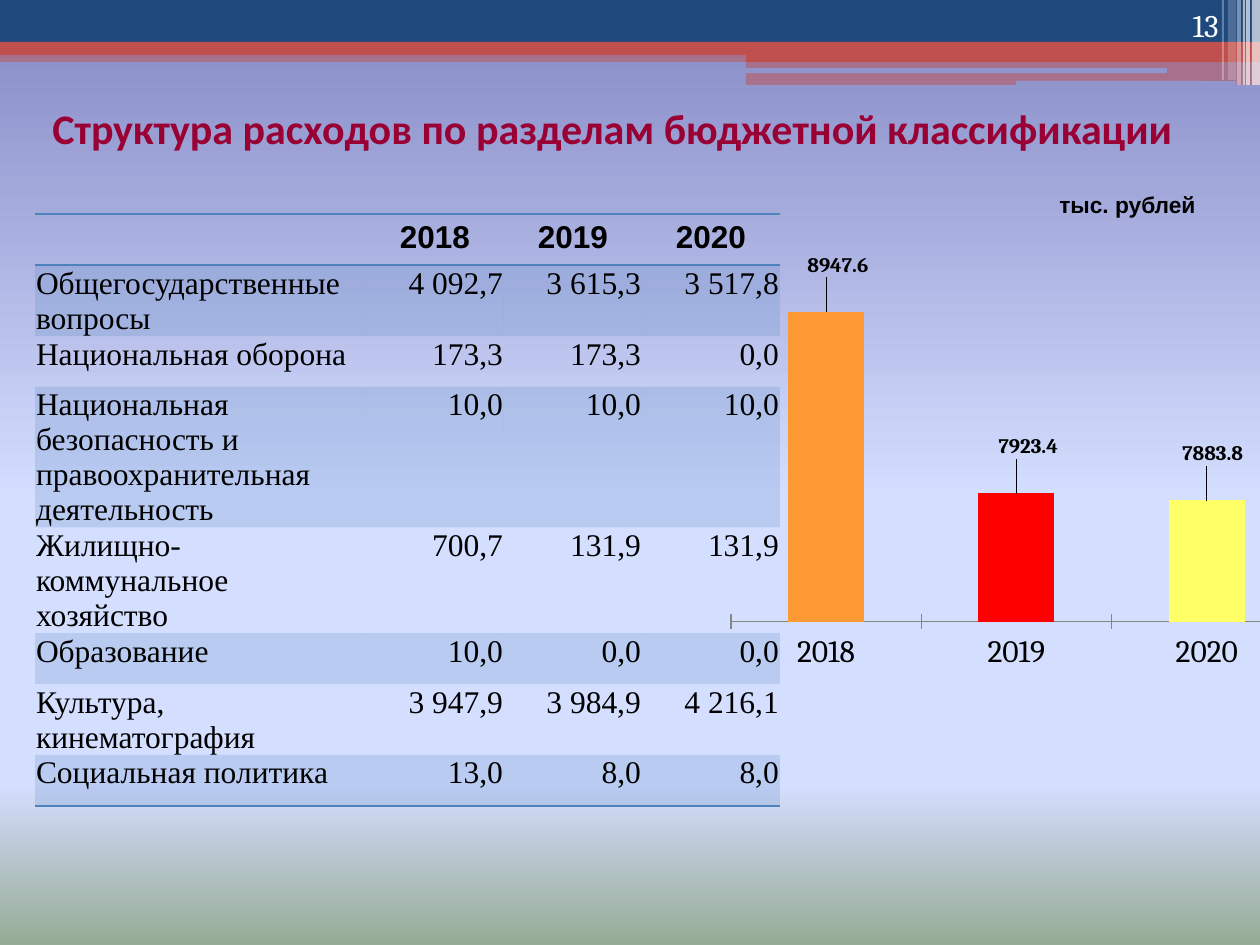
from pptx import Presentation
from pptx.chart.data import CategoryChartData
from pptx.dml.color import RGBColor
from pptx.enum.chart import XL_CHART_TYPE as CT, XL_LABEL_POSITION as LP, XL_TICK_MARK as TM
from pptx.enum.shapes import MSO_SHAPE as SHAPE
from pptx.enum.text import MSO_ANCHOR as ANCHOR, PP_ALIGN as AL
from pptx.oxml import parse_xml
from pptx.oxml.ns import nsdecls, qn
from pptx.util import Emu, Pt
from lxml.etree import SubElement

PX = 914400 // 126
C = dict(navy="1F497D", red="C0504D", white="FFFFFF", blue="4F81BD", black="000000",
         title="990033", sky="9095CC", axis="868686")
BACKGROUND = [(0, "8488C4"), (53, "D4DEFF"), (83, "D4DEFF"), (100, "96AB94")]

# Banner: left, top, width, height, colour, opacity %, preset
BANNER = [
    (0, 50, 1260, 12, "red", 50, SHAPE.RECTANGLE),
    (0, 0, 1260, 43, "navy", 100, SHAPE.RECTANGLE),
    (0, 42, 1260, 13, "red", 100, SHAPE.RECTANGLE),
    (746, 49, 514, 13, "red", 100, SHAPE.RECTANGLE),
    (746, 61, 514, 24, "red", 50, SHAPE.RECTANGLE),
    (745, 68, 422, 5, "sky", 100, SHAPE.ROUNDED_RECTANGLE),
    (1016, 81, 220, 5, "sky", 100, SHAPE.ROUNDED_RECTANGLE),
]
# Vertical stripes: left, width, height, opacity %
STRIPES = [(1252, 8, 85, 65), (1246, 4, 85, 65), (1243, 2, 85, 60),
           (1237, 4, 85, 40), (1228, 8, 80, 20), (1222, 2, 80, 30)]

TITLE = "Структура расходов по разделам бюджетной классификации"
YEARS = ["2018", "2019", "2020"]
EXPENSES = [
    ("Общегосударственные вопросы", "4 092,7", "3 615,3", "3 517,8"),
    ("Национальная оборона", "173,3", "173,3", "0,0"),
    ("Национальная безопасность и правоохранительная деятельность", "10,0", "10,0", "10,0"),
    ("Жилищно-коммунальное хозяйство", "700,7", "131,9", "131,9"),
    ("Образование", "10,0", "0,0", "0,0"),
    ("Культура, кинематография", "3 947,9", "3 984,9", "4 216,1"),
    ("Социальная политика", "13,0", "8,0", "8,0"),
]
COLUMNS, ROW = [331, 138, 138, 138], 51
TOTALS = [8947.6, 7923.4, 7883.8]
BAR_COLORS = ["FF9933", "FF0000", "FFFF66"]
LABEL_SHIFTS = [(0.02, -0.07), (0.02, -0.07), (0.01, -0.07)]


def box(*lengths):
    return [Emu(n * PX) for n in lengths]


def rgb(name):
    return RGBColor.from_string(C.get(name, name))


def paint(fill, color, opacity=100):
    fill.solid()
    fill.fore_color.rgb = rgb(color)
    if opacity < 100:
        clr = fill._xPr.find(qn("a:solidFill"))[0]
        SubElement(clr, qn("a:alpha")).set("val", str(opacity * 1000))


def style(font, size, name, color="black", bold=False):
    font.size, font.name, font.bold = Pt(size), name, bold
    font.color.rgb = rgb(color)


def write(tf, text, size, font, color="black", bold=False, align=AL.LEFT):
    p = tf.paragraphs[0]
    p.alignment = align
    r = p.add_run()
    r.text = text
    style(r.font, size, font, color, bold)


def add_bar(x, y, w, h, color, opacity, preset=SHAPE.RECTANGLE):
    sp = slide.shapes.add_shape(preset, *box(x, y, w, h))
    sp.shadow.inherit = False
    sp.line.fill.background()
    paint(sp.fill, color, opacity)


def add_text(x, y, w, h, *args, anchor=ANCHOR.TOP, **kwargs):
    tf = slide.shapes.add_textbox(*box(x, y, w, h)).text_frame
    tf.word_wrap = True
    tf.vertical_anchor = anchor
    write(tf, *args, **kwargs)


def add_border(cell, sides):
    for i, side in enumerate(sides):
        cell._tc.get_or_add_tcPr().insert(i, parse_xml(
            f'<a:ln{side} {nsdecls("a")} w="12700"><a:solidFill>'
            f'<a:srgbClr val="{C["blue"]}"/></a:solidFill></a:ln{side}>'))


def layout_xml(x, y, w=None, h=None):
    parts = [("xMode", "edge"), ("yMode", "edge")] if w else []
    if w:
        parts.insert(0, ("layoutTarget", "inner"))
    parts += [(k, v) for k, v in zip("xywh", (x, y, w, h)) if v is not None]
    inner = "".join(f'<c:{k} val="{v}"/>' for k, v in parts)
    return parse_xml(f'<c:layout {nsdecls("c")}><c:manualLayout>{inner}</c:manualLayout></c:layout>')


prs = Presentation()
prs.slide_width, prs.slide_height = box(1260, 945)
slide = prs.slides.add_slide(prs.slide_layouts[6])

# Background gradient
bg = slide.background.fill
bg.gradient()
bg.gradient_angle = 270
gs_list = bg._xPr.find(qn("a:gradFill")).find(qn("a:gsLst"))
for gs in list(gs_list):
    gs_list.remove(gs)
for pos, color in BACKGROUND:
    gs = SubElement(gs_list, qn("a:gs"), pos=str(pos * 1000))
    SubElement(gs, qn("a:srgbClr"), val=color)

# Banner
for bar in BANNER:
    add_bar(*bar)
for x, w, h, opacity in STRIPES:
    add_bar(x, 0, w, h, "white", opacity)

# Expense table
frame = slide.shapes.add_table(len(EXPENSES) + 1, len(COLUMNS),
                               *box(35, 214, sum(COLUMNS), ROW * (len(EXPENSES) + 1)))
table = frame.table
table._tbl.tblPr.find(qn("a:tableStyleId")).text = "{2D5ABB26-0587-4C30-8999-92F81FD0307C}"
for col, width in zip(table.columns, COLUMNS):
    col.width = Emu(width * PX)
for i, values in enumerate([("", *YEARS)] + EXPENSES):
    table.rows[i].height = Emu(ROW * PX)
    for j, value in enumerate(values):
        cell = table.cell(i, j)
        if i % 2:
            paint(cell.fill, "blue", 20)
        else:
            cell.fill.background()
        if i == 0:
            if value:
                write(cell.text_frame, value, 18, "Arial", bold=True, align=AL.CENTER)
            add_border(cell, "TB")
            continue
        cell.margin_left = cell.margin_right = cell.margin_top = Emu(PX)
        cell.margin_bottom = 0
        write(cell.text_frame, value, 18, "Times New Roman", align=AL.RIGHT if j else AL.LEFT)
        if i == len(EXPENSES):
            add_border(cell, "B")

# Title, slide number, unit
add_text(0, 96, 1225, 63, TITLE, 24, "Calibri", "title", True, AL.CENTER)
add_text(1126, 0, 105, 50, "13", 18, "Cambria", "white", align=AL.RIGHT, anchor=ANCHOR.BOTTOM)
add_text(1047, 185, 189, 40, "тыс. рублей", 13, "Arial", bold=True)

# Totals chart
data = CategoryChartData()
data.categories = YEARS
data.add_series("Series 1", TOTALS)
chart = slide.shapes.add_chart(CT.COLUMN_CLUSTERED, *box(719, 254, 595, 427), data).chart
chart.has_legend = chart.has_title = False
style(chart.font, 18, "Cambria")
plot_area = chart._chartSpace.chart.plotArea
for old in plot_area.findall(qn("c:layout")):
    plot_area.remove(old)
plot_area.insert(0, layout_xml(0.02, 0.02, 0.96, 0.84))

val_axis, cat_axis = chart.value_axis, chart.category_axis
val_axis.minimum_scale, val_axis.maximum_scale = 7200, 9200
val_axis.has_major_gridlines = False
val_axis.tick_labels.number_format = "0.0"
val_axis.tick_labels.number_format_is_linked = False
val_axis.visible = False
cat_axis.major_tick_mark = TM.CROSS
cat_axis.format.line.color.rgb = rgb("axis")

plot = chart.plots[0]
plot.vary_by_categories = False
plot.gap_width = 150
series = plot.series[0]
paint(series.format.fill, "blue")
for i, (color, shift) in enumerate(zip(BAR_COLORS, LABEL_SHIFTS)):
    point = series.points[i]
    paint(point.format.fill, color)
    label = point.data_label
    style(label.font, 12, "Cambria", bold=True)
    label.position = LP.OUTSIDE_END
    label._get_or_add_dLbl().insert(1, layout_xml(*shift))

prs.save("out.pptx")
